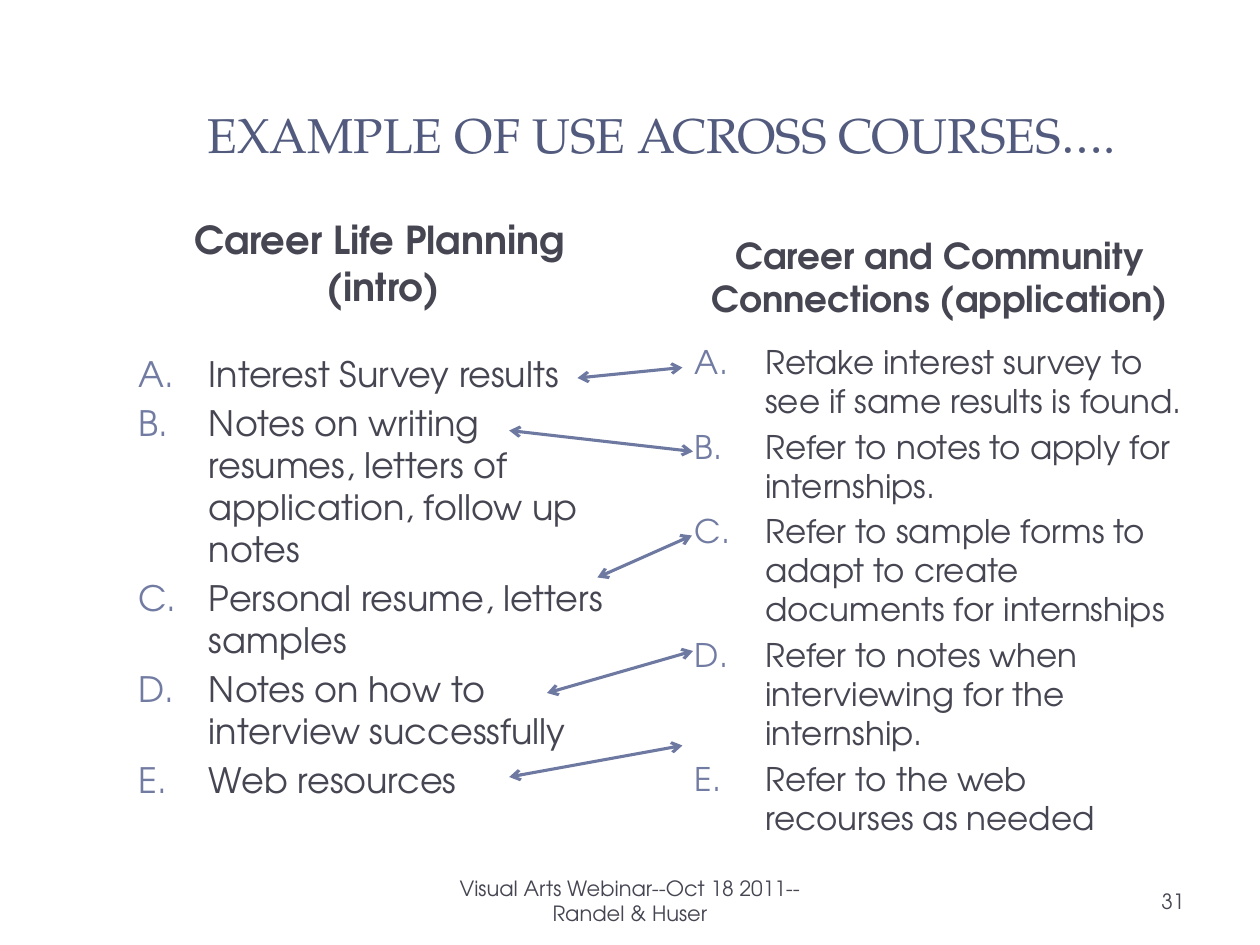
from lxml import etree
from pptx import Presentation
from pptx.dml.color import RGBColor
from pptx.enum.shapes import MSO_CONNECTOR as Connector
from pptx.enum.text import MSO_ANCHOR as Anchor, MSO_AUTO_SIZE as AutoSize, PP_ALIGN as Align
from pptx.oxml.ns import qn
from pptx.util import Inches, Pt

BODY_FONT, TITLE_FONT = "TeX Gyre Adventor", "TeX Gyre Pagella"
TEXT, TITLE, LETTER, ARROW = "464653", "525B7E", "727CA3", "6E79A1"
CELL = Inches(10) / 120  # the slide is a grid of 120 columns by 90 rows

INTRO = [
    "Interest Survey results",
    "Notes on writing resumes, letters of application, follow up notes",
    "Personal resume, letters samples",
    "Notes on how to interview successfully",
    "Web resources",
]
APPLICATION = [
    "Retake interest survey to see if same results is found.",
    "Refer to notes to apply for internships.",
    "Refer to sample forms to adapt to create documents for internships",
    "Refer to notes when interviewing for the internship.",
    "Refer to the web recourses as needed",
]
# Ends of each arrow: column, row, column, row
ARROWS = [
    (55, 36, 65, 35),
    (48.5, 41, 66, 43),
    (56.9, 55, 65.9, 51),
    (52.1, 66, 66, 62),
    (48.5, 74, 65, 71),
]


def grid(*cells):
    return [round(cell * CELL) for cell in cells]


def color(hex_string):
    return RGBColor.from_string(hex_string)


def style(para, size, align=Align.LEFT, bold=False, font=BODY_FONT, hex_string=TEXT):
    para.alignment = align
    para.font.name, para.font.size, para.font.bold = font, Pt(size), bold
    para.font.color.rgb = color(hex_string)


def add_text(page, box, lines, size, anchor=Anchor.TOP, **look):
    frame = page.shapes.add_textbox(*grid(*box)).text_frame
    frame.word_wrap = True
    frame.vertical_anchor = anchor
    frame.text = "\n".join(lines)
    for para in frame.paragraphs:
        style(para, size, **look)
    return frame.paragraphs


def add_letter(para):
    """Number a paragraph A., B., C. with a hanging indent."""
    props = para._p.get_or_add_pPr()
    indent = Inches(0.56)
    props.set("marL", str(indent))
    props.set("indent", str(-indent))
    bullet_color = etree.Element(qn("a:buClr"))
    etree.SubElement(bullet_color, qn("a:srgbClr"), val=LETTER)
    numbering = etree.Element(qn("a:buAutoNum"), type="alphaUcPeriod")
    run_defaults = props.find(qn("a:defRPr"))
    run_defaults.addprevious(bullet_color)
    run_defaults.addprevious(numbering)


def add_title(page, box, text):
    title = page.shapes.title
    title.left, title.top, title.width, title.height = grid(*box)
    frame = title.text_frame
    frame.auto_size = AutoSize.NONE
    frame.vertical_anchor = Anchor.TOP
    frame.margin_top, frame.margin_bottom = Inches(0.53), 0
    frame.text = text
    style(frame.paragraphs[0], 27.9, Align.CENTER, font=TITLE_FONT, hex_string=TITLE)


def add_course(page, box, heading, heading_rows, heading_size, items, list_offset, list_size):
    left, top, width, height = box
    paras = add_text(page, (left, top, width, heading_rows), [heading], heading_size,
                     Anchor.BOTTOM, align=Align.CENTER, bold=True)
    paras[0].space_before = Pt(heading_size * 0.2)
    list_box = (left, top + list_offset, width, height - list_offset)
    for para in add_text(page, list_box, items, list_size):
        para.space_before = Pt(round(list_size * 0.2, 1))
        add_letter(para)


def add_arrow(page, ends):
    arrow = page.shapes.add_connector(Connector.STRAIGHT, *grid(*ends))
    arrow.line.color.rgb = color(ARROW)
    arrow.line.width = Pt(1.75)
    line = arrow.line._get_or_add_ln()
    for end in ("a:headEnd", "a:tailEnd"):
        etree.SubElement(line, qn(end), type="arrow")
    etree.SubElement(arrow._element.spPr, qn("a:effectLst"))


def add_footer(page, box, note, number):
    left, top, width, height = box
    add_text(page, (left + 29, top, 38, height), [note], 12, Anchor.MIDDLE, align=Align.CENTER)
    add_text(page, (left + width - 28, top, 28, height), [number], 12, Anchor.MIDDLE,
             align=Align.RIGHT)


def main():
    deck = Presentation()
    deck.slide_width, deck.slide_height = Inches(10), Inches(7.5)
    page = deck.slides.add_slide(deck.slide_layouts[5])
    page.background.fill.solid()
    page.background.fill.fore_color.rgb = color("FFFFFF")

    add_title(page, (12, 3.6, 102, 12.4), "EXAMPLE OF USE ACROSS COURSES….")

    # The two courses side by side
    add_course(page, (12, 22, 49, 58.5), "Career Life Planning\t(intro)", 8, 22,
               INTRO, 11, 20)
    add_course(page, (65, 22, 49, 58.5), "Career and Community Connections (application)", 9, 20.4,
               APPLICATION, 10, 18.6)

    # Links between matching items
    for ends in ARROWS:
        add_arrow(page, ends)

    add_footer(page, (12, 83.4, 102, 4.8), "Visual Arts Webinar--Oct 18 2011--Randel & Huser", "31")
    deck.save("out.pptx")


if __name__ == "__main__":
    main()
